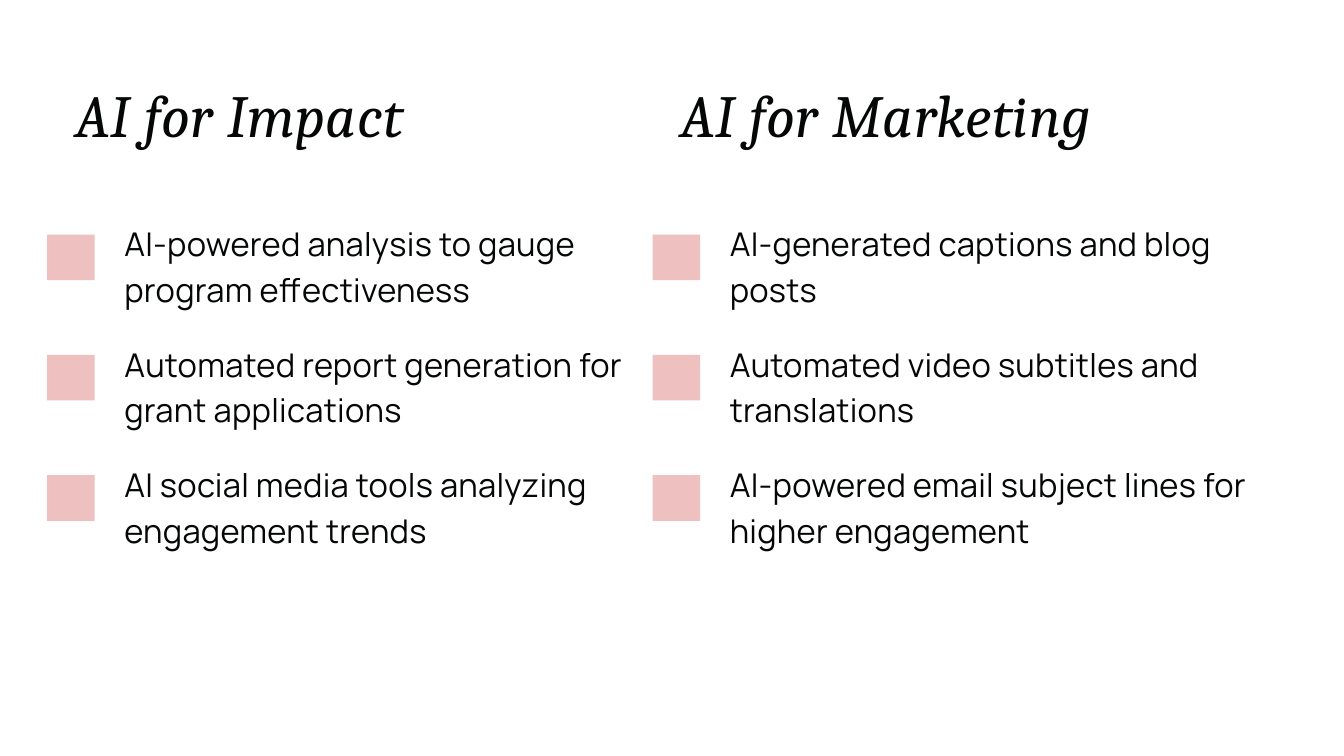
from dataclasses import dataclass

from pptx import Presentation
from pptx.dml.color import RGBColor as Rgb
from pptx.enum.shapes import MSO_SHAPE as Shape
from pptx.enum.text import MSO_ANCHOR as Anchor, MSO_AUTO_SIZE as Fit, PP_ALIGN as Align
from pptx.oxml.ns import qn
from pptx.util import Inches, Pt


@dataclass(frozen=True)
class Theme:
    ink: Rgb = Rgb(0x05, 0x07, 0x07)
    pink: Rgb = Rgb(0xEE, 0xC0, 0xBF)
    head_font: str = "Cambria"
    list_font: str = "Manrope"
    head_size: int = 64
    list_size: int = 35


THEME = Theme()
HEAD = {
    "font": {"name": THEME.head_font, "size": Pt(THEME.head_size),
             "italic": True, "bold": False},
    "para": {"line_spacing": Pt(87), "alignment": Align.LEFT},
    "track": 60,
}
LIST = {
    "font": {"name": THEME.list_font, "size": Pt(THEME.list_size), "bold": False},
    "para": {"line_spacing": Pt(49), "alignment": Align.LEFT},
    "track": 30,
}
FRAME = {"margin_left": 0, "margin_top": 0, "margin_right": 0, "margin_bottom": 0,
         "word_wrap": True, "auto_size": Fit.NONE, "vertical_anchor": Anchor.TOP}

COLUMNS = [
    ("AI for Impact", [
        "AI-powered analysis to gauge program effectiveness",
        "Automated report generation for grant applications",
        "AI social media tools analyzing engagement trends",
    ]),
    ("AI for Marketing", [
        "AI-generated captions and blog posts",
        "Automated video subtitles and translations",
        "AI-powered email subject lines for higher engagement",
    ]),
]
COMPARISON = 4       # layout with a heading and a list on each side
SLOTS = [(0, 2), (3, 4)]  # heading and list placeholder of each column
SPARE = 1
LEFT, STEP = 0.7, 9.01
PITCH = 1.79         # from one list item to the next
GAP = Pt(PITCH * 72 - 2 * 49)  # what two lines leave of the pitch


def set_all(target, values):
    for name, value in values.items():
        setattr(target, name, value)


def place(shape, *box):
    set_all(shape, dict(zip(("left", "top", "width", "height"), map(Inches, box))))


def write(holder, lines, style):
    """Fill a placeholder with one unbulleted paragraph per line."""
    frame = holder.text_frame
    set_all(frame, FRAME)
    frame.text = "\n".join(lines)
    for i, para in enumerate(frame.paragraphs):
        props = para._p.get_or_add_pPr()
        props.set("marL", "0")
        props.set("indent", "0")
        props.append(props.makeelement(qn("a:buNone"), {}))
        set_all(para, style["para"] | {"space_before": GAP if i else Pt(0)})
        for run in para.runs:
            set_all(run.font, style["font"])
            run.font.color.rgb = THEME.ink
            run._r.get_or_add_rPr().set("spc", str(style["track"]))


def add_marker(slide, x, y):
    box = slide.shapes.add_shape(Shape.RECTANGLE, *map(Inches, (x, y, 0.71, 0.68)))
    box.shadow.inherit = False
    box.fill.solid()
    box.fill.fore_color.rgb = THEME.pink
    box.line.fill.background()


def add_column(slide, x, slots, title, items):
    head, body = (next(h for h in slide.placeholders if h.placeholder_format.idx == idx)
                  for idx in slots)
    place(head, x + 0.42, 1.02, 8.02, 1.17)
    write(head, [title], HEAD)
    place(body, x + 1.15, 3.24, 7.72, 2 * PITCH + 1.35)
    write(body, items, LIST)
    for row in range(len(items)):
        add_marker(slide, x, 3.49 + row * PITCH)


def main():
    deck = Presentation()
    deck.slide_width, deck.slide_height = Inches(20), Inches(11.25)
    slide = deck.slides.add_slide(deck.slide_layouts[COMPARISON])
    for holder in list(slide.placeholders):
        if holder.placeholder_format.idx == SPARE:
            holder.element.getparent().remove(holder.element)
    for col, (slots, (title, items)) in enumerate(zip(SLOTS, COLUMNS)):
        add_column(slide, LEFT + col * STEP, slots, title, items)
    deck.save("out.pptx")


if __name__ == "__main__":
    main()
